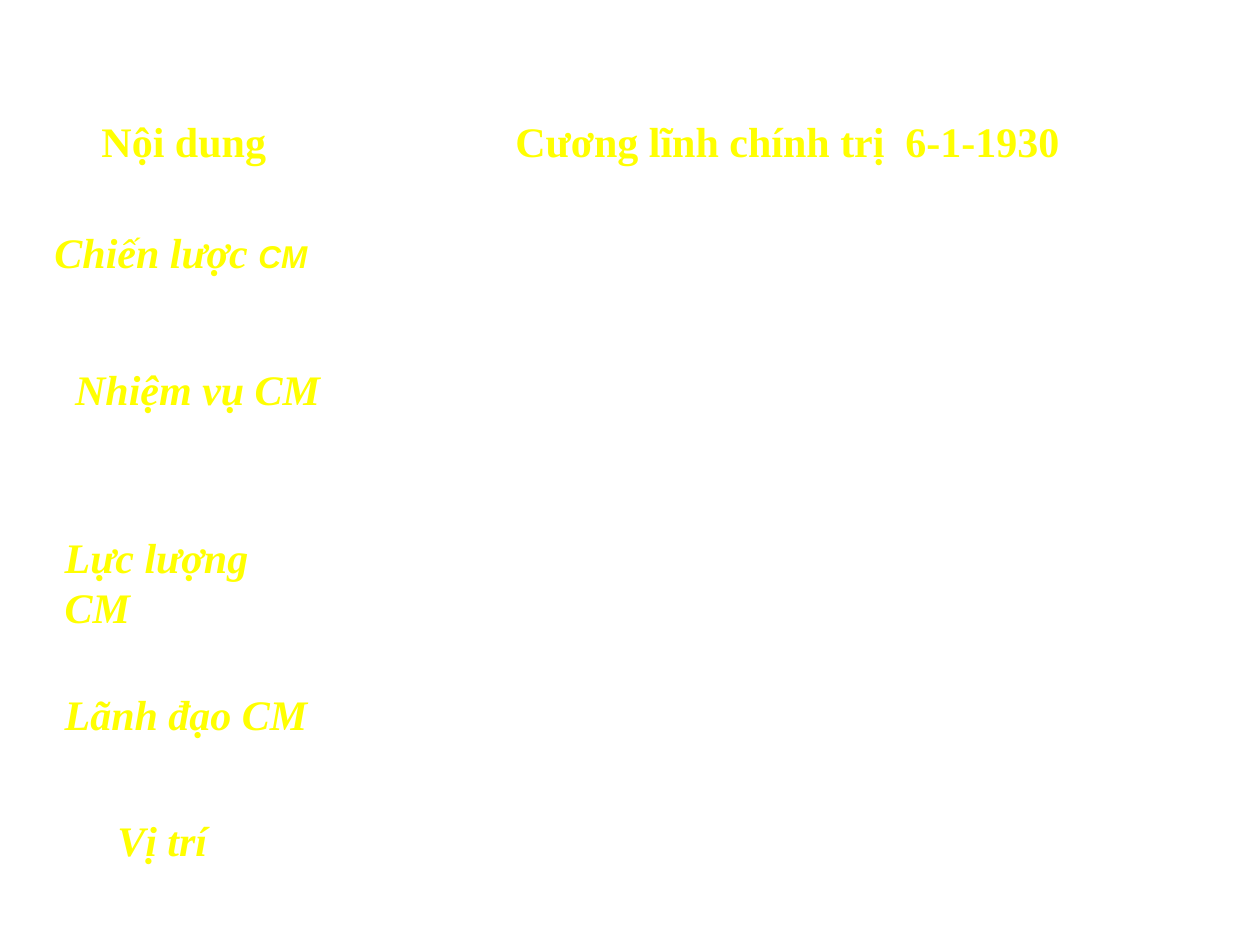
from lxml import etree
from pptx import Presentation
from pptx import util as u
from pptx.dml.color import RGBColor
from pptx.enum import text
from pptx.oxml.ns import qn

COLORS = {"background": "FFFFFF", "label": "FFFF00", "rule": "FFFFFF"}
SERIF, SANS = "Times New Roman", "Arial"
THIN, THICK = 1, 2.25


def color(name):
    return RGBColor.from_string(COLORS[name])


def write(paragraph, words, size=24, font=SERIF, italic=False, align=None):
    run = paragraph.add_run()
    run.text = words
    run.font.size, run.font.name = u.Pt(size), font
    run.font.bold, run.font.italic = True, italic
    run.font.color.rgb = color("label")
    if align is not None:
        paragraph.alignment = align


class Board:
    """Slide on a grid of 120 columns by 90 rows."""

    def __init__(self, prs):
        self.unit_x = prs.slide_width / 120
        self.unit_y = prs.slide_height / 90
        self.slide = prs.slides.add_slide(prs.slide_layouts[6])
        fill = self.slide.background.fill
        fill.solid()
        fill.fore_color.rgb = color("background")

    def place(self, col, row, cols, rows):
        return (round(col * self.unit_x), round(row * self.unit_y),
                round(cols * self.unit_x), round(rows * self.unit_y))

    def border(self, cell, widths):
        props = cell._tc.get_or_add_tcPr()
        for side, points in widths.items():
            line = etree.SubElement(props, qn(f"a:ln{side}"), w=str(u.Pt(points)))
            fill = etree.SubElement(line, qn("a:solidFill"))
            etree.SubElement(fill, qn("a:srgbClr"), val=COLORS["rule"])

    def table(self, col, row, widths, heights, headings):
        box = self.place(col, row, sum(widths), sum(heights))
        grid = self.slide.shapes.add_table(len(heights), len(widths), *box).table
        grid.first_row = grid.horz_banding = False
        for column, width in zip(grid.columns, widths):
            column.width = round(width * self.unit_x)
        for line, height in zip(grid.rows, heights):
            line.height = round(height * self.unit_y)
        last_row, last_col = len(heights) - 1, len(widths) - 1
        for r in range(len(heights)):
            for c in range(len(widths)):
                cell = grid.cell(r, c)
                # Thick frame outside, thin rules inside
                self.border(cell, {
                    "L": THICK if c == 0 else THIN,
                    "R": THICK if c == last_col else THIN,
                    "T": THICK if r == 0 else THIN,
                    "B": THICK if r == last_row else THIN})
                cell.fill.background()
        for c, heading in enumerate(headings):
            write(grid.cell(0, c).text_frame.paragraphs[0], heading,
                  align=text.PP_ALIGN.CENTER)

    def label(self, col, row, cols, parts, indent=0, wrap=False):
        box = self.slide.shapes.add_textbox(*self.place(col, row, cols, 6))
        frame = box.text_frame
        frame.word_wrap = wrap
        frame.auto_size = text.MSO_AUTO_SIZE.SHAPE_TO_FIT_TEXT
        frame.margin_left = u.Inches(0.1 + indent)
        for words, style in parts:
            write(frame.paragraphs[0], words, italic=True, **style)


def main():
    prs = Presentation()
    prs.slide_width, prs.slide_height = u.Inches(10), u.Inches(7.5)
    board = Board(prs)

    # Comparison table with its headings
    board.table(2, 10.8, [31, 84], [6.84, 12.72, 14.64, 15.96, 12, 12.84],
                ["Nội dung", "Cương lĩnh chính trị  6-1-1930"])

    # Row labels laid over the first column
    board.label(4, 21, 32, [("Chiến lược ", {}),
                            ("CM", {"size": 18, "font": SANS})], wrap=True)
    board.label(5, 34, 26.8, [("Nhiệm vụ CM", {})], indent=0.08)
    board.label(4, 50, 28, [("Lực lượng CM", {})], indent=0.08)
    board.label(4, 65, 29, [("Lãnh đạo CM", {})], indent=0.08, wrap=True)
    board.label(10, 77, 11, [("Vị trí", {})])

    prs.save("out.pptx")


if __name__ == "__main__":
    main()
